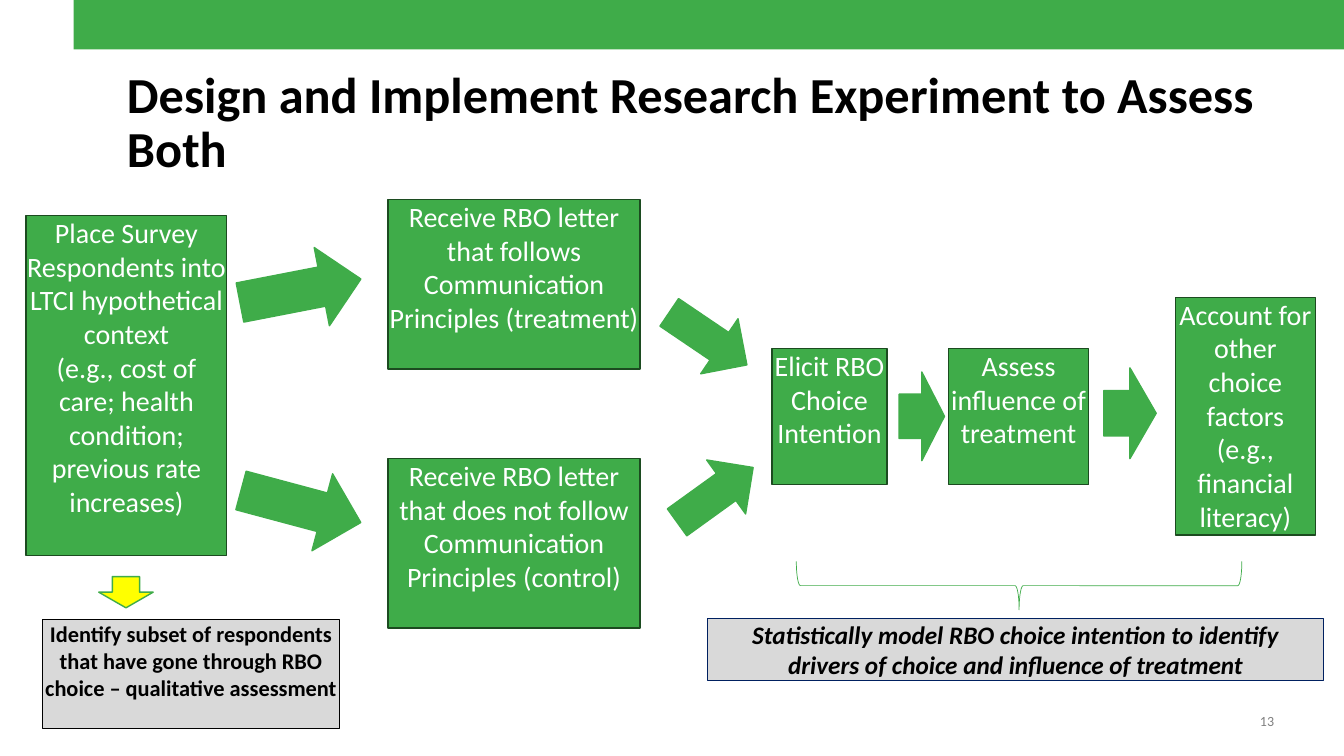
from dataclasses import dataclass

from pptx import Presentation
from pptx.dml.color import RGBColor
from pptx.enum.shapes import MSO_SHAPE
from pptx.enum.text import MSO_ANCHOR, MSO_AUTO_SIZE, PP_ALIGN
from pptx.shapes.autoshape import Shape
from pptx.slide import Slide
from pptx.util import Pt

GREEN = "3FAC49"
DARK_GREEN = "1C4B20"
GREY = "D9D9D9"
BLACK = "000000"
WHITE = "FFFFFF"


@dataclass(frozen=True)
class Area:
    left: float
    top: float
    width: float
    height: float


@dataclass(frozen=True)
class TextStyle:
    size: float
    color: str
    bold: bool = False
    italic: bool = False
    align: PP_ALIGN = PP_ALIGN.CENTER
    anchor: MSO_ANCHOR = MSO_ANCHOR.TOP
    spacing: float = 1.0


@dataclass(frozen=True)
class Step:
    area: Area
    lines: tuple[str, ...]
    style: TextStyle = TextStyle(20, WHITE)
    fill: str = GREEN
    line: str = DARK_GREEN
    line_width: float = 1


@dataclass(frozen=True)
class Symbol:
    kind: MSO_SHAPE
    area: Area
    rotation: float = 0
    fill: str | None = GREEN
    line_width: float = 1


LETTER_LEFT, LETTER_WIDTH, LETTER_HEIGHT = 277.2, 180, 121
CHOICE_TOP, CHOICE_HEIGHT = 249.12, 97.2

STEPS = (
    Step(Area(18.72, 154.1, 143.28, 242.6), (
        "Place Survey Respondents into LTCI hypothetical context",
        "(e.g., cost of care; health condition; previous rate increases)")),
    Step(Area(LETTER_LEFT, 142.56, LETTER_WIDTH, LETTER_HEIGHT), (
        "Receive RBO letter that follows Communication Principles (treatment)",)),
    Step(Area(LETTER_LEFT, 327.6, LETTER_WIDTH, LETTER_HEIGHT), (
        "Receive RBO letter that does not follow Communication Principles (control)",)),
    Step(Area(551.52, CHOICE_TOP, 82.08, CHOICE_HEIGHT), (
        "Elicit RBO Choice Intention",)),
    Step(Area(677.52, CHOICE_TOP, 100.08, CHOICE_HEIGHT), (
        "Assess influence of treatment",)),
    Step(Area(839.52, 212.4, 100.08, 169.92), (
        "Account for other choice factors (e.g., financial literacy)",)),
    Step(Area(505.44, 442.08, 439.92, 43.92), (
        "Statistically model RBO choice intention to identify",
        "drivers of choice and influence of treatment"),
        TextStyle(18, BLACK, bold=True, italic=True), GREY, "002060", 0.75),
    Step(Area(30.24, 442.8, 212.4, 77.76), (
        "Identify subset of respondents that have gone through RBO choice – qualitative assessment",),
        TextStyle(16, BLACK, bold=True), GREY, BLACK, 0.75),
)

SYMBOLS = (
    Symbol(MSO_SHAPE.RIGHT_ARROW, Area(170.64, 179.28, 88, 56.88), 349),
    Symbol(MSO_SHAPE.RIGHT_ARROW, Area(170.64, 333.36, 88.56, 56.88), 15),
    Symbol(MSO_SHAPE.RIGHT_ARROW, Area(472.32, 218.16, 66.96, 47.52), 34.1),
    Symbol(MSO_SHAPE.RIGHT_ARROW, Area(477.36, 329.76, 66.96, 47.52), 324.2),
    Symbol(MSO_SHAPE.RIGHT_ARROW, Area(642.24, 265.68, 32.4, 63.36)),
    Symbol(MSO_SHAPE.RIGHT_ARROW, Area(788.4, 262.8, 37.44, 64.8)),
    Symbol(MSO_SHAPE.DOWN_ARROW, Area(70.56, 411.84, 38.88, 22.32), fill="FFFF00"),
    Symbol(MSO_SHAPE.RIGHT_BRACE, Area(710.64, 259.2, 34.56, 318.24), 90, None, 0.5),
)


def rgb(value: str) -> RGBColor:
    return RGBColor.from_string(value)


def place(shape: Shape, area: Area) -> None:
    shape.left, shape.top = Pt(area.left), Pt(area.top)
    shape.width, shape.height = Pt(area.width), Pt(area.height)


def write(shape: Shape, lines: tuple[str, ...], style: TextStyle) -> None:
    frame = shape.text_frame
    frame.word_wrap = True
    frame.auto_size = MSO_AUTO_SIZE.NONE
    frame.vertical_anchor = style.anchor
    frame.margin_left = frame.margin_right = Pt(0)
    frame.margin_top = frame.margin_bottom = Pt(0)
    frame.text = "\n".join(lines)
    for para in frame.paragraphs:
        para.alignment = style.align
        para.line_spacing = style.spacing
        para.font.name = "Calibri"
        para.font.size = Pt(style.size)
        para.font.bold = style.bold
        para.font.italic = style.italic
        para.font.color.rgb = rgb(style.color)


def add_shape(page: Slide, kind: MSO_SHAPE, area: Area, fill: str | None,
              line: str | None, line_width: float = 1) -> Shape:
    shape = page.shapes.add_shape(
        kind, Pt(area.left), Pt(area.top), Pt(area.width), Pt(area.height))
    shape.shadow.inherit = False
    if fill:
        shape.fill.solid()
        shape.fill.fore_color.rgb = rgb(fill)
    else:
        shape.fill.background()
    if line:
        shape.line.color.rgb = rgb(line)
        shape.line.width = Pt(line_width)
    else:
        shape.line.fill.background()
    return shape


def add_step(page: Slide, step: Step) -> None:
    box = add_shape(page, MSO_SHAPE.RECTANGLE, step.area, step.fill,
                    step.line, step.line_width)
    write(box, step.lines, step.style)


def add_symbol(page: Slide, symbol: Symbol) -> None:
    shape = add_shape(page, symbol.kind, symbol.area, symbol.fill,
                      GREEN, symbol.line_width)
    shape.rotation = symbol.rotation


def main() -> None:
    deck = Presentation()
    deck.slide_width, deck.slide_height = Pt(960), Pt(540)
    page = deck.slides.add_slide(deck.slide_layouts[5])

    add_shape(page, MSO_SHAPE.RECTANGLE, Area(52.56, 0, 907.44, 35.28), GREEN, None)

    title = page.shapes.title
    place(title, Area(90.72, 84.96, 813.6, 42.48))
    write(title, ("Design and Implement Research Experiment to Assess Both",),
          TextStyle(36, BLACK, bold=True, align=PP_ALIGN.LEFT,
                    anchor=MSO_ANCHOR.BOTTOM, spacing=0.9))

    for step in STEPS:
        add_step(page, step)
    for symbol in SYMBOLS:
        add_symbol(page, symbol)

    number = page.shapes.add_textbox(Pt(883.44), Pt(506.88), Pt(26.64), Pt(14.4))
    write(number, ("13",), TextStyle(10, "808080", align=PP_ALIGN.RIGHT,
                                     anchor=MSO_ANCHOR.BOTTOM))

    deck.save("out.pptx")


if __name__ == "__main__":
    main()
